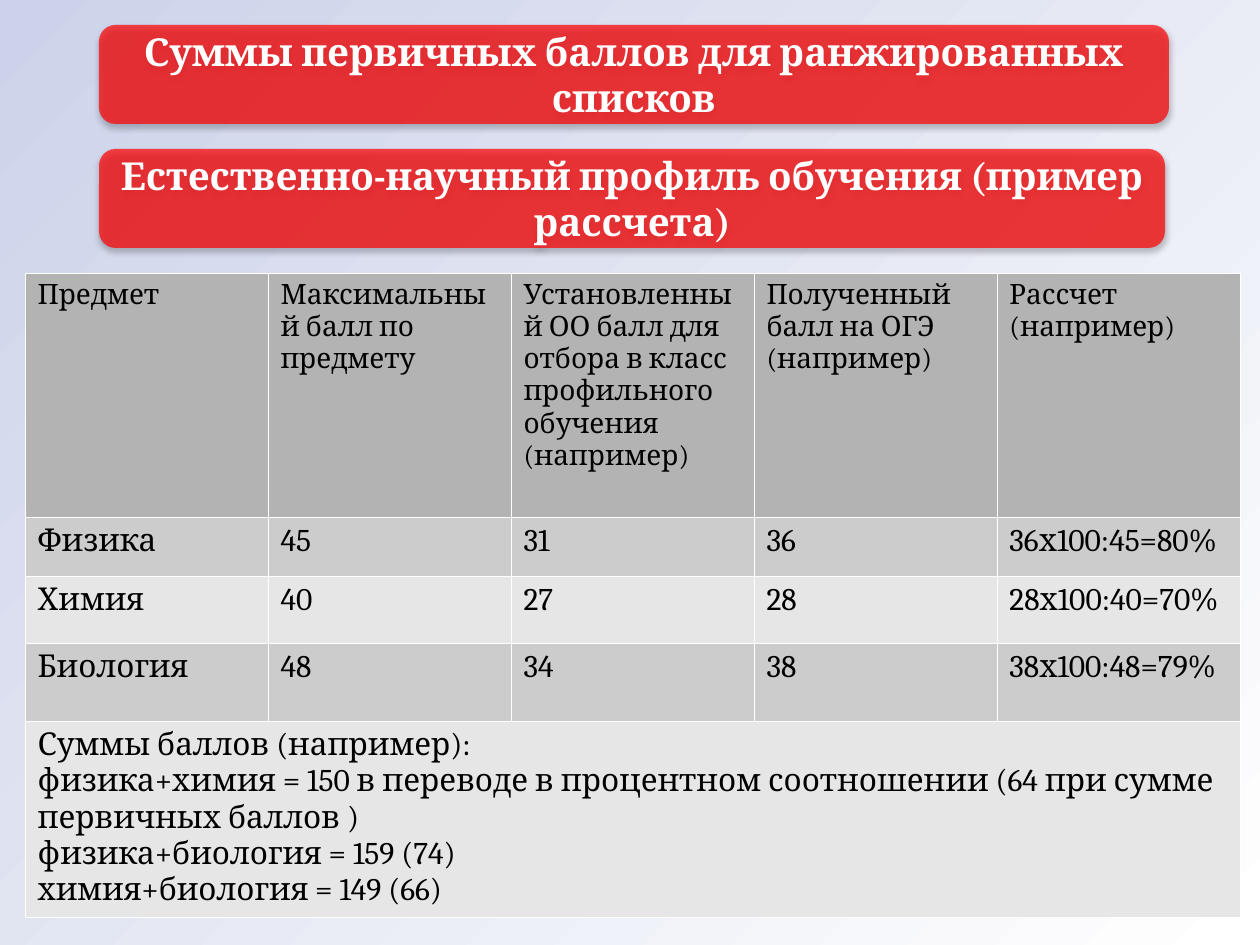
from lxml import etree
from pptx import Presentation
from pptx.dml.color import RGBColor
from pptx.enum.shapes import MSO_SHAPE
from pptx.enum.text import MSO_ANCHOR, PP_ALIGN
from pptx.oxml import parse_xml
from pptx.oxml.ns import nsdecls, qn
from pptx.util import Emu, Pt

ROUNDED_RECTANGLE = MSO_SHAPE.ROUNDED_RECTANGLE
MIDDLE = MSO_ANCHOR.MIDDLE
CENTER = PP_ALIGN.CENTER

PALE_BLUE = RGBColor(0xCC, 0xD2, 0xE9)
WHITE = RGBColor(0xFF, 0xFF, 0xFF)
BLACK = RGBColor(0x00, 0x00, 0x00)
RED = RGBColor(0xFF, 0x00, 0x00)
HEADER_GRAY = RGBColor(0xB3, 0xB3, 0xB3)
BAND_GRAYS = (RGBColor(0xCC, 0xCC, 0xCC), RGBColor(0xE6, 0xE6, 0xE6))

PX_PER_INCH = 126
SLIDE_WIDTH, SLIDE_HEIGHT = 1260, 945

BANNERS = [
    (25, 1070, "Суммы первичных баллов для ранжированных списков"),
    (149, 1066, "Естественно-научный профиль обучения (пример рассчета)"),
]
TABLE_ROWS = [
    ["Предмет", "Максимальный балл по предмету",
     "Установленный ОО балл для отбора в класс профильного обучения (например)",
     "Полученный балл на ОГЭ (например)", "Рассчет (например)"],
    ["Физика", "45", "31", "36", "36х100:45=80%"],
    ["Химия", "40", "27", "28", "28х100:40=70%"],
    ["Биология", "48", "34", "38", "38х100:48=79%"],
    ["Суммы баллов (например):\n"
     "физика+химия = 150 в переводе в процентном соотношении "
     "(64 при сумме первичных баллов )\n"
     "физика+биология = 159 (74)\n"
     "химия+биология = 149 (66)"],
]
ROW_HEIGHTS = [244, 59, 67, 78, 196]
COLUMN_WIDTH = 243


def px(length):
    return Emu(round(length * 914400 / PX_PER_INCH))


class SlideBuilder:
    font_name = "Cambria"

    def __init__(self, slide):
        self.slide = slide

    def background(self, start, end):
        fill = self.slide.background.fill
        fill.gradient()
        fill.gradient_angle = 315
        for stop, color in zip(fill.gradient_stops, (start, end)):
            stop.color.rgb = color

    def set_text(self, text_frame, text, size, color, bold=False, align=None):
        text_frame.text = text
        for paragraph in text_frame.paragraphs:
            paragraph.alignment = align
            font = paragraph.font
            font.name, font.size, font.bold = self.font_name, Pt(size), bold
            font.color.rgb = color

    def banner(self, left, top, width, height, text):
        shape = self.slide.shapes.add_shape(
            ROUNDED_RECTANGLE, px(left), px(top), px(width), px(height))
        shape.fill.solid()
        shape.fill.fore_color.rgb = RED
        shape.line.fill.background()
        properties = shape.element.spPr
        color = properties.find(qn("a:solidFill"))[0]
        etree.SubElement(color, qn("a:alpha"), val="71000")
        properties.append(parse_xml(
            f'<a:effectLst {nsdecls("a")}>'
            f'<a:outerShdw blurRad="{Pt(3.5)}" dist="{Pt(2.2)}" dir="5400000" rotWithShape="0">'
            '<a:srgbClr val="000000"><a:alpha val="32000"/></a:srgbClr>'
            '</a:outerShdw></a:effectLst>'))
        shape.text_frame.word_wrap = True
        shape.text_frame.vertical_anchor = MIDDLE
        self.set_text(shape.text_frame, text, 22, WHITE, bold=True, align=CENTER)

    def cell_borders(self, cell, color):
        properties = cell._tc.get_or_add_tcPr()
        for side in ("lnL", "lnR", "lnT", "lnB"):
            properties.append(parse_xml(
                f'<a:{side} {nsdecls("a")} w="{Pt(0.06)}"><a:solidFill>'
                f'<a:srgbClr val="{color}"/></a:solidFill></a:{side}>'))

    def table(self, left, top, column_width, row_heights, rows):
        column_count = len(rows[0])
        table = self.slide.shapes.add_table(
            len(rows), column_count, px(left), px(top),
            px(column_width * column_count), px(sum(row_heights))).table
        table.first_row = table.horz_banding = False
        for column in table.columns:
            column.width = px(column_width)
        for index, (texts, height) in enumerate(zip(rows, row_heights)):
            table.rows[index].height = px(height)
            color = BAND_GRAYS[(index - 1) % 2] if index else HEADER_GRAY
            for cell in table.rows[index].cells:
                self.cell_borders(cell, WHITE)
                cell.fill.solid()
                cell.fill.fore_color.rgb = color
            if len(texts) == 1:
                table.cell(index, 0).merge(table.cell(index, column_count - 1))
            for column_index, text in enumerate(texts):
                self.set_text(table.cell(index, column_index).text_frame, text,
                              18 if index else 16, BLACK)


def main():
    presentation = Presentation()
    presentation.slide_width = px(SLIDE_WIDTH)
    presentation.slide_height = px(SLIDE_HEIGHT)
    builder = SlideBuilder(presentation.slides.add_slide(presentation.slide_layouts[6]))
    builder.background(PALE_BLUE, WHITE)
    for top, width, text in BANNERS:
        builder.banner(99, top, width, 99, text)
    builder.table(25, 273, COLUMN_WIDTH, ROW_HEIGHTS, TABLE_ROWS)
    presentation.save("out.pptx")


if __name__ == "__main__":
    main()
